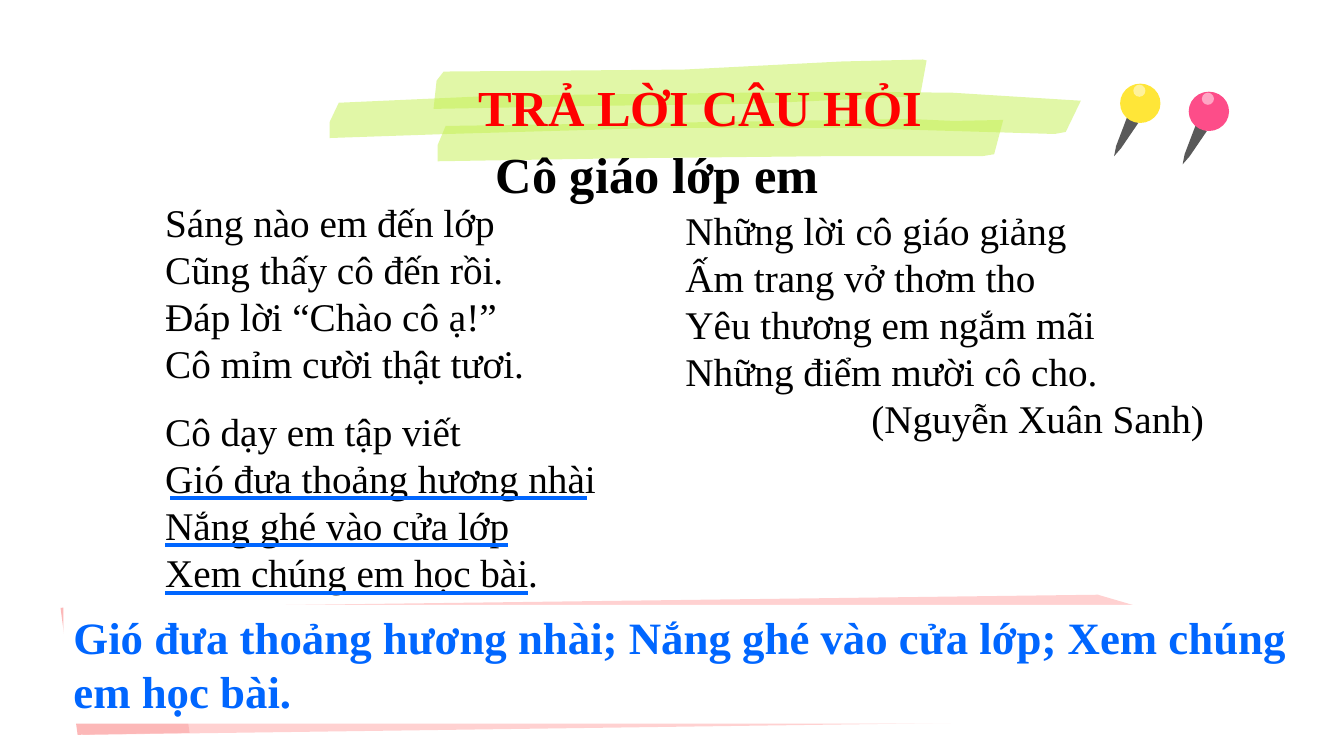
from dataclasses import dataclass

from lxml.etree import SubElement
from pptx import Presentation
from pptx.dml.color import RGBColor
from pptx.enum.shapes import MSO_CONNECTOR, MSO_SHAPE
from pptx.enum.text import MSO_ANCHOR, MSO_AUTO_SIZE, PP_ALIGN
from pptx.oxml.ns import qn
from pptx.util import Inches, Pt

FONT = "Times New Roman"
BLACK, RED, BLUE, WHITE = "000000", "FF0000", "0066FF", "FFFFFF"
GREY, YELLOW, PINK, LIME = "595959", "FFE638", "FD4D89", "C4F150"
Points = list[tuple[float, float]]


@dataclass
class Outline:
    points: Points
    color: str
    opacity: int = 100


@dataclass
class Pin:
    left: float
    top: float
    color: str


@dataclass
class Line:
    text: str
    align: PP_ALIGN = PP_ALIGN.LEFT
    space_before: float = 0


@dataclass
class TextBlock:
    left: float
    top: float
    width: float
    height: float
    lines: list[Line]
    size: int
    color: str = BLACK
    bold: bool = False
    wrap: bool = True
    grow: bool = True
    inset: float | None = None


@dataclass
class Underline:
    start: float
    end: float


STROKES: list[Points] = [
    [(8.22, 0.91), (4.93, 0.95), (3.36, 1.02), (3.27, 1.21), (3.27, 1.37), (4.44, 1.33),
     (6.52, 1.27), (8.43, 1.27), (10.46, 1.33), (10.57, 1.31), (10.72, 1), (9.44, 0.92)],
    [(9.01, 1.18), (7.12, 1.21), (4.42, 1.25), (4.34, 1.44), (4.34, 1.6), (6.2, 1.57),
     (8.19, 1.55), (9.74, 1.55), (9.86, 1.53), (9.95, 1.19), (9.46, 1.2)],
    [(9.15, 0.59), (8.35, 0.61), (6.78, 0.69), (4.4, 0.71), (4.33, 0.8), (4.3, 1.08),
     (5.94, 1.05), (7.46, 1.03), (8.98, 0.96), (9.13, 0.93), (9.19, 0.6)],
]
HIGHLIGHTS = [Outline(points, LIME, 50) for points in STROKES]
BANNER = [
    Outline([(0.82, 7.29), (11.09, 7.15), (12.9, 6.49), (10.89, 5.9), (0.63, 6.03)], "FFD1D1"),
    Outline([(1.88, 7.27), (0.77, 7.29), (0.6, 6.03), (1.7, 6.01)], "FCB8B8"),
]
SPIKE = [(0.15, 0.33), (0.04, 0.62), (0.02, 0.72), (0.09, 0.64), (0.26, 0.39)]
PINS = [Pin(11.03, 0.83, YELLOW), Pin(11.71, 0.91, PINK)]

HEADINGS = [
    TextBlock(3.08, 0.31, 7.73, 1.18, [Line("TRẢ LỜI CÂU HỎI", PP_ALIGN.CENTER)],
              36, RED, True, grow=False, inset=0.13),
    TextBlock(4.8, 1.37, 3.44, 0.71, [Line("Cô giáo lớp em", PP_ALIGN.CENTER)],
              36, bold=True, wrap=False),
]
POEM = [
    TextBlock(1.54, 1.92, 7.67, 4.17, [
        Line("Sáng nào em đến lớp"),
        Line("Cũng thấy cô đến rồi."),
        Line("Đáp lời “Chào cô ạ!”"),
        Line("Cô mỉm cười thật tươi."),
        Line("Cô dạy em tập viết", space_before=14.4),
        Line("Gió đưa thoảng hương nhài"),
        Line("Nắng ghé vào cửa lớp"),
        Line("Xem chúng em học bài."),
    ], 28),
    TextBlock(6.7, 2, 5.34, 2.46, [
        Line("Những lời cô giáo giảng"),
        Line("Ấm trang vở thơm tho"),
        Line("Yêu thương em ngắm mãi"),
        Line("Những điểm mười cô cho."),
        Line("(Nguyễn Xuân Sanh)", PP_ALIGN.RIGHT),
    ], 28),
]
UNDERLINES = [Underline(1.69, 5.82), Underline(1.64, 5.04), Underline(1.64, 5.24)]
FIRST_UNDERLINE, LINE_PITCH = 4.94, 0.47
ANSWER = TextBlock(0.63, 6, 12.3, 1.18, [
    Line("Gió đưa thoảng hương nhài; Nắng ghé vào cửa lớp; Xem chúng em học bài."),
], 32, BLUE, True)


def rgb(color: str) -> RGBColor:
    return RGBColor.from_string(color)


def paint(shape, color: str, opacity: int = 100) -> None:
    """Give a shape a plain fill with no line or shadow."""
    shape.shadow.inherit = False
    shape.line.fill.background()
    shape.fill.solid()
    shape.fill.fore_color.rgb = rgb(color)
    if opacity < 100:
        tint = shape._element.spPr.find(qn("a:solidFill"))[0]
        SubElement(tint, qn("a:alpha")).set("val", str(opacity * 1000))


def draw_outline(group, outline: Outline) -> None:
    corners = [(Inches(x), Inches(y)) for x, y in outline.points]
    builder = group.shapes.build_freeform(*corners[0])
    builder.add_line_segments(corners[1:], close=True)
    paint(builder.convert_to_shape(), outline.color, outline.opacity)


def draw_outlines(page, outlines: list[Outline]) -> None:
    group = page.shapes.add_group_shape()
    for outline in outlines:
        draw_outline(group, outline)


def draw_oval(group, left: float, top: float, width: float, height: float,
              color: str, opacity: int = 100) -> None:
    oval = group.shapes.add_shape(MSO_SHAPE.OVAL, Inches(left), Inches(top),
                                  Inches(width), Inches(height))
    paint(oval, color, opacity)


def draw_pin(page, pin: Pin) -> None:
    group = page.shapes.add_group_shape()
    draw_outline(group, Outline([(pin.left + x, pin.top + y) for x, y in SPIKE], GREY))
    draw_oval(group, pin.left + 0.08, pin.top, 0.4, 0.39, pin.color)
    draw_oval(group, pin.left + 0.21, pin.top + 0.01, 0.12, 0.12, WHITE, 50)


def write_lines(box, block: TextBlock) -> None:
    frame = box.text_frame
    frame.word_wrap = block.wrap
    frame.auto_size = MSO_AUTO_SIZE.SHAPE_TO_FIT_TEXT if block.grow else MSO_AUTO_SIZE.NONE
    frame.vertical_anchor = MSO_ANCHOR.TOP if block.grow else MSO_ANCHOR.BOTTOM
    if block.inset is not None:
        frame.margin_left = frame.margin_right = Inches(block.inset)
        frame.margin_top = frame.margin_bottom = Inches(block.inset)
    for index, line in enumerate(block.lines):
        para = frame.add_paragraph() if index else frame.paragraphs[0]
        para.alignment = line.align
        if line.space_before:
            para.space_before = Pt(line.space_before)
        span = para.add_run()
        span.text = line.text
        span.font.name, span.font.size, span.font.bold = FONT, Pt(block.size), block.bold
        span.font.color.rgb = rgb(block.color)


def frame_of(block: TextBlock) -> list[Inches]:
    return [Inches(length) for length in (block.left, block.top, block.width, block.height)]


def draw_underline(page, mark: Underline, top: float) -> None:
    line = page.shapes.add_connector(MSO_CONNECTOR.STRAIGHT, Inches(mark.start), Inches(top),
                                     Inches(mark.end), Inches(top))
    line.line.color.rgb = rgb(BLUE)
    line.line.width = Pt(3)
    SubElement(line._element.spPr, qn("a:effectLst"))


def main() -> None:
    deck = Presentation()
    deck.slide_width, deck.slide_height = Inches(13.33), Inches(7.5)
    page = deck.slides.add_slide(deck.slide_layouts[6])
    for pin in PINS:
        draw_pin(page, pin)
    draw_outlines(page, HIGHLIGHTS)
    for block in HEADINGS + POEM:
        write_lines(page.shapes.add_textbox(*frame_of(block)), block)
    draw_outlines(page, BANNER)
    for index, mark in enumerate(UNDERLINES):
        draw_underline(page, mark, FIRST_UNDERLINE + index * LINE_PITCH)
    answer = page.shapes.add_shape(MSO_SHAPE.RECTANGLE, *frame_of(ANSWER))
    paint(answer, WHITE)
    write_lines(answer, ANSWER)
    deck.save("out.pptx")


if __name__ == "__main__":
    main()
